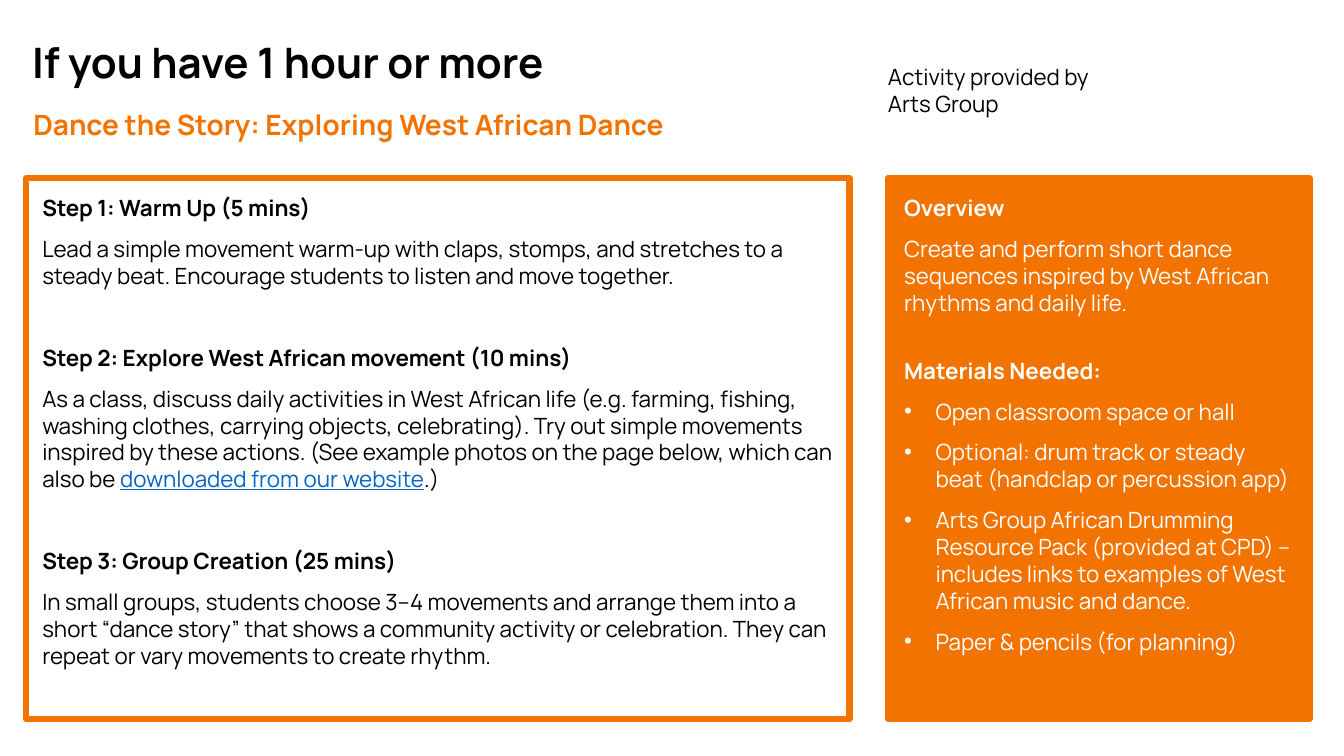
from lxml import etree
from pptx import Presentation
from pptx.dml.color import RGBColor
from pptx.enum import shapes, text
from pptx.oxml import ns
from pptx.util import Pt

FONT = "Manrope"
BLACK = RGBColor(0x00, 0x00, 0x00)
WHITE = RGBColor(0xFF, 0xFF, 0xFF)
ORANGE = RGBColor(0xF2, 0x73, 0x00)
LINK_BLUE = RGBColor(0x05, 0x63, 0xC1)

BODY_SIZE = 16
SPACE_AFTER = 10
INDENT = 22.5
INSET = 11.5
PANEL_TOP, PANEL_HEIGHT = 127.4, 386
STEPS_LEFT, STEPS_WIDTH = 18.7, 588.2
OVERVIEW_LEFT, OVERVIEW_WIDTH = 634.3, 301

# left, top, width, height, text, size, colour, bold, line spacing
HEADINGS = [
    (23, 26.6, 912, 45.4, "If you have 1 hour or more", 30, BLACK, True, 0.9),
    (23.8, 73.4, 912, 45.4, "Dance the Story: Exploring West African Dance", 20, ORANGE, True, 1.0),
    (OVERVIEW_LEFT, 41.8, 175, 77.8, "Activity provided by\vArts Group", BODY_SIZE, BLACK, False, 1.0),
]

# kind, pieces of text; the second piece is shown as a link
STEPS = [
    ("heading", ["Step 1: Warm Up (5 mins)"]),
    ("body", ["Lead a simple movement warm-up with claps, stomps, and stretches to a steady beat. "
              "Encourage students to listen and move together."]),
    ("heading", ["Step 2: Explore West African movement (10 mins)"]),
    ("body", ["As a class, discuss daily activities in West African life (e.g. farming, fishing, "
              "washing clothes, carrying objects, celebrating). Try out simple movements inspired "
              "by these actions. (See example photos on the page below, which can also be ",
              "downloaded from our website", ".)"]),
    ("heading", ["Step 3: Group Creation (25 mins)"]),
    ("body", ["In small groups, students choose 3–4 movements and arrange them into a short "
              "“dance story” that shows a community activity or celebration. They can repeat or "
              "vary movements to create rhythm."]),
]
OVERVIEW = [
    ("heading", ["Overview"]),
    ("body", ["Create and perform short dance sequences inspired by West African rhythms and daily life."]),
    ("heading", ["Materials Needed:"]),
    ("bullet", ["Open classroom space or hall"]),
    ("bullet", ["Optional: drum track or steady beat (handclap or percussion app)"]),
    ("bullet", ["Arts Group African Drumming Resource Pack (provided at CPD) – includes links to "
                "examples of West African music and dance."]),
    ("bullet", ["Paper & pencils (for planning)"]),
]


def style_run(run, size, color, bold=False):
    run.font.name = FONT
    run.font.size = Pt(size)
    run.font.bold = bold
    run.font.color.rgb = color


def set_frame(frame, horizontal, vertical):
    """Wrap the text from the top, with the given insets."""
    frame.word_wrap = True
    frame.vertical_anchor = text.MSO_ANCHOR.TOP
    frame.margin_left = frame.margin_right = Pt(horizontal)
    frame.margin_top = frame.margin_bottom = Pt(vertical)


def add_bullet(paragraph):
    properties = paragraph._p.get_or_add_pPr()
    properties.set("marL", str(Pt(INDENT)))
    properties.set("indent", str(-Pt(INDENT)))
    etree.SubElement(properties, ns.qn("a:buFont"), typeface="Arial")
    etree.SubElement(properties, ns.qn("a:buChar"), char="•")


def add_heading(slide, left, top, width, height, words, size, color, bold, spacing):
    box = slide.shapes.add_textbox(Pt(left), Pt(top), Pt(width), Pt(height))
    set_frame(box.text_frame, 0, 3.6)
    box.text_frame.text = words
    paragraph = box.text_frame.paragraphs[0]
    paragraph.line_spacing = spacing
    for run in paragraph.runs:
        style_run(run, size, color, bold)


def add_panel(slide, left, width, fill, color, section_gap, content):
    """Orange-edged panel; section_gap is the extra space above later headings."""
    panel = slide.shapes.add_shape(
        shapes.MSO_SHAPE.RECTANGLE, Pt(left), Pt(PANEL_TOP), Pt(width), Pt(PANEL_HEIGHT))
    panel.shadow.inherit = False
    panel.fill.solid()
    panel.fill.fore_color.rgb = fill
    panel.line.color.rgb = ORANGE
    panel.line.width = Pt(4.5)
    etree.SubElement(panel.line._get_or_add_ln(), ns.qn("a:round"))
    frame = panel.text_frame
    set_frame(frame, INSET, INSET)
    for index, (kind, pieces) in enumerate(content):
        paragraph = frame.add_paragraph() if index else frame.paragraphs[0]
        if kind == "bullet":
            add_bullet(paragraph)
        paragraph.alignment = text.PP_ALIGN.LEFT
        paragraph.space_after = Pt(SPACE_AFTER)
        if kind == "heading" and index:
            paragraph.space_before = Pt(section_gap)
        for position, piece in enumerate(pieces):
            run = paragraph.add_run()
            run.text = piece
            is_link = position == 1
            style_run(run, BODY_SIZE, LINK_BLUE if is_link else color, kind == "heading")
            if is_link:
                run.font.underline = True


def main():
    presentation = Presentation()
    presentation.slide_width, presentation.slide_height = Pt(960), Pt(540)
    slide = presentation.slides.add_slide(presentation.slide_layouts[6])
    add_panel(slide, STEPS_LEFT, STEPS_WIDTH, WHITE, BLACK, 29.2, STEPS)
    add_panel(slide, OVERVIEW_LEFT, OVERVIEW_WIDTH, ORANGE, WHITE, 19.2, OVERVIEW)
    for heading in HEADINGS:
        add_heading(slide, *heading)
    presentation.save("out.pptx")


if __name__ == "__main__":
    main()
